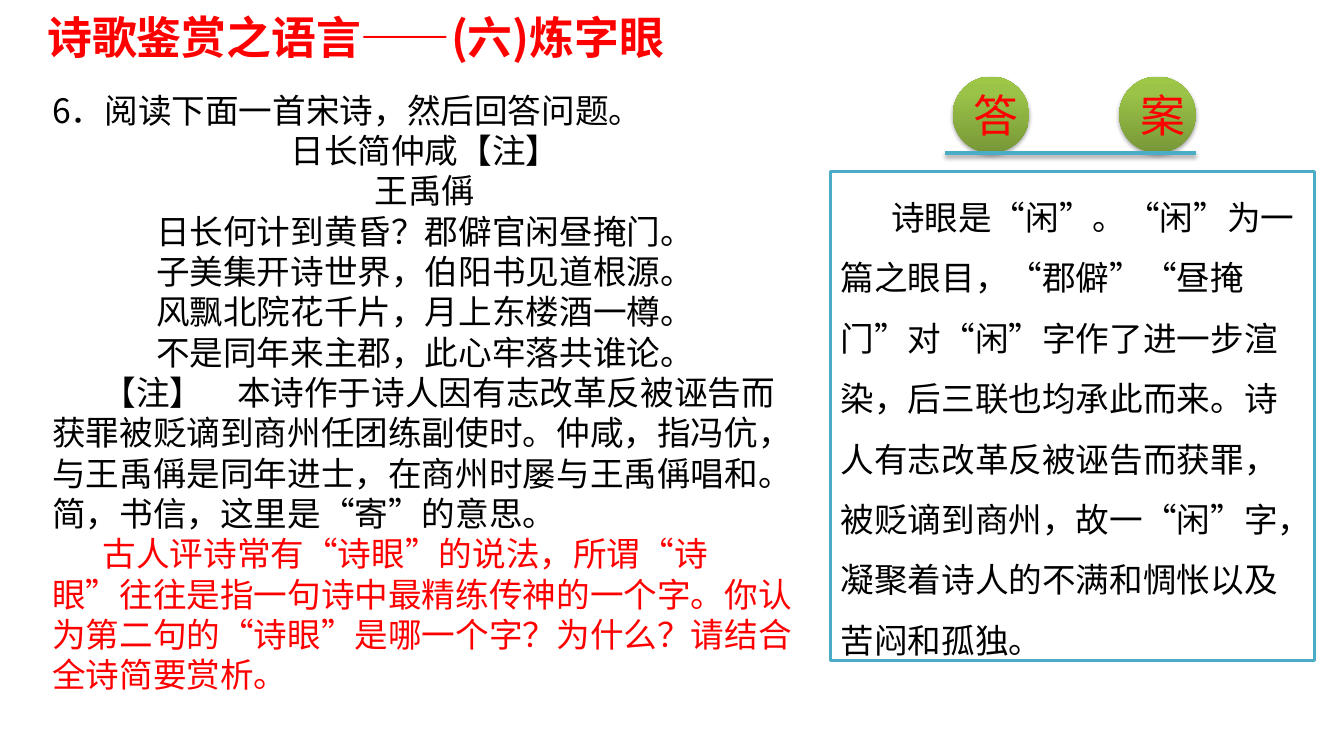
"""Build the poetry slide on finding the key word of a Song poem."""
from dataclasses import dataclass

from lxml import etree
from pptx import Presentation
from pptx.dml.color import RGBColor
from pptx.enum.shapes import MSO_CONNECTOR as Connector, MSO_SHAPE as Preset
from pptx.enum.text import MSO_ANCHOR as Anchor, MSO_AUTO_SIZE as AutoSize, PP_ALIGN as Align
from pptx.oxml import parse_xml
from pptx.oxml.ns import nsdecls, qn
from pptx.util import Inches, Pt


@dataclass(frozen=True)
class Theme:
    font: str = "Noto Sans CJK SC"
    red: str = "FF0000"
    black: str = "000000"
    white: str = "FFFFFF"
    teal: str = "4BACC6"
    greens: tuple = ((0, "779737"), (80, "9BC348"), (100, "9DC746"))
    title_size: int = 32
    body_size: int = 24


theme = Theme()


def write(frame, text, size=theme.body_size, color=theme.black, bold=False,
          align=Align.LEFT, indent=0, spacing=None):
    paragraph = frame.paragraphs[0]
    if paragraph.runs:
        paragraph = frame.add_paragraph()
    paragraph.alignment = align
    if indent:
        properties = paragraph._p.get_or_add_pPr()
        properties.set("marL", "0")
        properties.set("indent", str(Inches(indent)))
    if spacing:
        paragraph.line_spacing = spacing
    run = paragraph.add_run()
    run.text = text
    run.font.size = Pt(size)
    run.font.bold = bold
    run.font.color.rgb = RGBColor.from_string(color)
    run.font.name = theme.font
    letters = run._r.get_or_add_rPr()
    letters.set("lang", "zh-CN")
    etree.SubElement(letters, qn("a:ea")).set("typeface", theme.font)


def cast_shadow(shape):
    shape._element.spPr.append(parse_xml(
        f'<a:effectLst {nsdecls("a")}><a:outerShdw blurRad="{Pt(3.1)}" dist="{Pt(1.8)}" '
        f'dir="5400000" rotWithShape="0"><a:srgbClr val="{theme.black}">'
        '<a:alpha val="35000"/></a:srgbClr></a:outerShdw></a:effectLst>'))


deck = Presentation()
deck.slide_width, deck.slide_height = Inches(13.33), Inches(7.5)
slide = deck.slides.add_slide(deck.slide_layouts[6])
shapes = slide.shapes

title = shapes.add_textbox(Inches(0.37), Inches(0.05), Inches(6.77), Inches(0.64)).text_frame
title.word_wrap = True
title.auto_size = AutoSize.SHAPE_TO_FIT_TEXT
write(title, "诗歌鉴赏之语言——(六)炼字眼", size=theme.title_size, color=theme.red, bold=True)

question = shapes.add_textbox(Inches(0.42), Inches(0.84), Inches(7.59), Inches(6.16)).text_frame
question.word_wrap = True
question.auto_size = AutoSize.SHAPE_TO_FIT_TEXT
write(question, "6．阅读下面一首宋诗，然后回答问题。")
poem = (
    "日长简仲咸【注】",
    "王禹偁",
    "日长何计到黄昏？郡僻官闲昼掩门。",
    "子美集开诗世界，伯阳书见道根源。",
    "风飘北院花千片，月上东楼酒一樽。",
    "不是同年来主郡，此心牢落共谁论。",
)
for verse in poem:
    write(question, verse, align=Align.CENTER)
write(question, "【注】　本诗作于诗人因有志改革反被诬告而获罪被贬谪到商州任团练副使时。"
      "仲咸，指冯伉，与王禹偁是同年进士，在商州时屡与王禹偁唱和。"
      "简，书信，这里是“寄”的意思。", indent=0.5)
write(question, "古人评诗常有“诗眼”的说法，所谓“诗眼”往往是指一句诗中最精练传神的一个字。"
      "你认为第二句的“诗眼”是哪一个字？为什么？请结合全诗简要赏析。",
      color=theme.red, indent=0.5)

answer = shapes.add_shape(Preset.RECTANGLE, Inches(8.24), Inches(1.7), Inches(4.8), Inches(4.85))
answer.shadow.inherit = False
answer.fill.solid()
answer.fill.fore_color.rgb = RGBColor.from_string(theme.white)
answer.line.color.rgb = RGBColor.from_string(theme.teal)
answer.line.width = Pt(2)
answer.text_frame.word_wrap = True
answer.text_frame.auto_size = AutoSize.SHAPE_TO_FIT_TEXT
answer.text_frame.vertical_anchor = Anchor.TOP
write(answer.text_frame, "诗眼是“闲”。“闲”为一篇之眼目，“郡僻”“昼掩门”对“闲”字作了进一步渲染，"
      "后三联也均承此而来。诗人有志改革反被诬告而获罪，被贬谪到商州，故一“闲”字，"
      "凝聚着诗人的不满和惆怅以及苦闷和孤独。", indent=0.5, spacing=1.5)

stops = "".join(f'<a:gs pos="{position * 1000}"><a:srgbClr val="{color}"/></a:gs>'
                for position, color in theme.greens)
for left, character in ((9.45, "答"), (11.1, "案")):
    badge = shapes.add_shape(Preset.OVAL, Inches(left), Inches(0.76), Inches(0.76), Inches(0.76))
    badge.line.fill.background()
    badge._element.spPr.find(qn("a:prstGeom")).addnext(parse_xml(
        f'<a:gradFill {nsdecls("a")} rotWithShape="1"><a:gsLst>{stops}</a:gsLst>'
        '<a:lin ang="16200000" scaled="0"/></a:gradFill>'))
    cast_shadow(badge)
    badge.text_frame.word_wrap = True
    badge.text_frame.vertical_anchor = Anchor.MIDDLE
    write(badge.text_frame, character, size=theme.title_size, color=theme.red, align=Align.CENTER)

underline = shapes.add_connector(Connector.STRAIGHT, Inches(9.37), Inches(1.52),
                                 Inches(11.86), Inches(1.52))
underline.line.color.rgb = RGBColor.from_string(theme.teal)
underline.line.width = Pt(3)
cast_shadow(underline)

deck.save("out.pptx")
